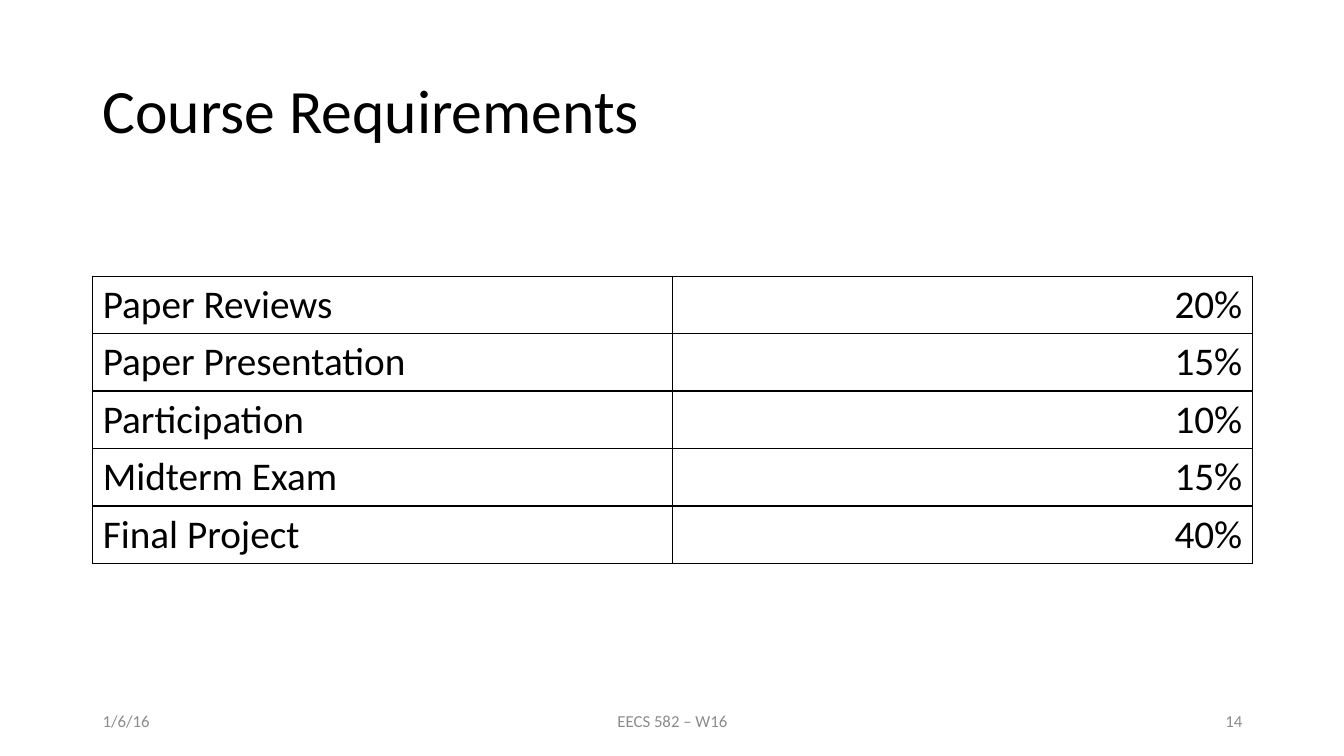
from dataclasses import dataclass

from lxml import etree
from pptx import Presentation
from pptx import util as u
from pptx.dml.color import RGBColor
from pptx.enum import text
from pptx.oxml import ns

PX = 9144  # 100 px to the inch


@dataclass(frozen=True)
class Theme:
    font: str = "Calibri"
    ink: str = "000000"
    muted: str = "8C8C8C"
    title_size: int = 44
    table_size: int = 28
    footer_size: int = 12
    border_width: int = 1


THEME = Theme()
ALIGN = text.PP_ALIGN

REQUIREMENTS = [
    ("Paper Reviews", "20%"),
    ("Paper Presentation", "15%"),
    ("Participation", "10%"),
    ("Midterm Exam", "15%"),
    ("Final Project", "40%"),
]


def px(*lengths):
    return [u.Emu(length * PX) for length in lengths]


def write(frame, words, *, size, color=THEME.ink, align=ALIGN.LEFT, spacing=1.0):
    para = frame.paragraphs[0]
    para.alignment = align
    para.line_spacing = spacing
    span = para.add_run()
    span.text = words
    span.font.name = THEME.font
    span.font.size = u.Pt(size)
    span.font.color.rgb = RGBColor.from_string(color)


def add_label(page, box, words, **style):
    frame = page.shapes.add_textbox(*px(*box)).text_frame
    frame.word_wrap = True
    frame.vertical_anchor = text.MSO_ANCHOR.MIDDLE
    write(frame, words, **style)


def border_cell(cell):
    """Draw a solid line on all four sides of a cell."""
    properties = cell._tc.get_or_add_tcPr()
    for index, side in enumerate(("lnL", "lnR", "lnT", "lnB")):
        line = etree.Element(ns.qn(f"a:{side}"), w=str(u.Pt(THEME.border_width)))
        fill = etree.SubElement(line, ns.qn("a:solidFill"))
        etree.SubElement(fill, ns.qn("a:srgbClr"), val=THEME.ink)
        properties.insert(index, line)


def add_requirements(page, box, rows):
    left, top, width, height = box
    table = page.shapes.add_table(len(rows), 2, *px(*box)).table
    table.first_row = table.horz_banding = False
    for column in table.columns:
        column.width = u.Emu(width * PX // 2)
    for row, values in zip(table.rows, rows):
        row.height = u.Emu(height * PX // len(rows))
        for cell, words, align in zip(row.cells, values, (ALIGN.LEFT, ALIGN.RIGHT)):
            cell.fill.background()
            border_cell(cell)
            write(cell.text_frame, words, size=THEME.table_size, align=align)


def add_footer(page, box, date, course, number):
    left, top, width, height = box
    side, middle = 300, 450
    parts = [
        (left, side, date, ALIGN.LEFT),
        (left + (width - middle) // 2, middle, course, ALIGN.CENTER),
        (left + width - side, side, number, ALIGN.RIGHT),
    ]
    for start, span_width, words, align in parts:
        add_label(page, (start, top, span_width, height), words,
                  size=THEME.footer_size, color=THEME.muted, align=align)


def main():
    deck = Presentation()
    deck.slide_width, deck.slide_height = u.Inches(13.33), u.Inches(7.5)
    page = deck.slides.add_slide(deck.slide_layouts[6])
    left, width = 92, 1150
    add_label(page, (left, 40, width, 145), "Course Requirements",
              size=THEME.title_size, spacing=0.9)
    add_requirements(page, (left, 274, width, 285), REQUIREMENTS)
    add_footer(page, (left, 695, width, 40), "1/6/16", "EECS 582 – W16", "14")
    deck.save("out.pptx")


if __name__ == "__main__":
    main()
